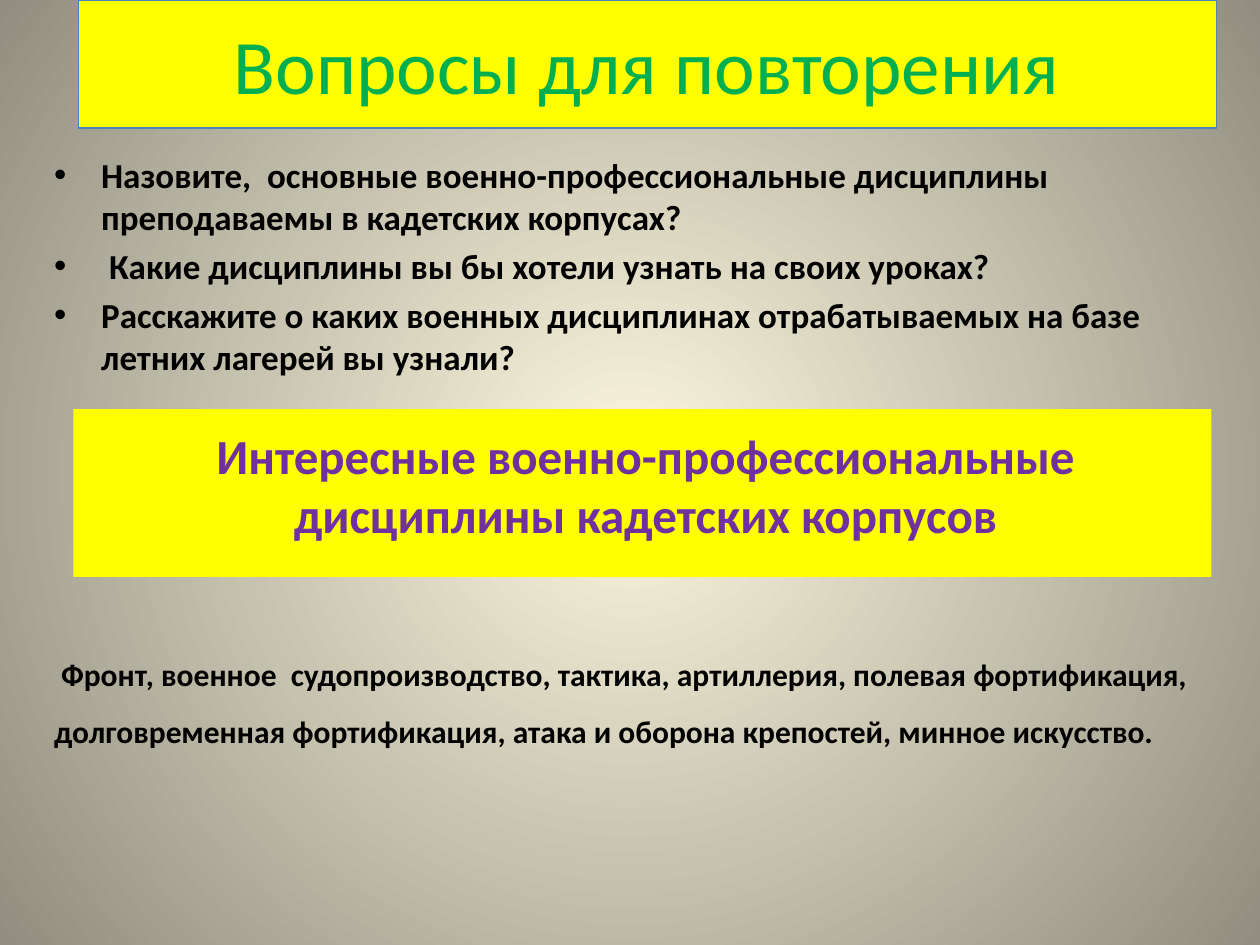
"""Build the review-questions slide."""
from dataclasses import dataclass

from lxml.etree import SubElement
from pptx import Presentation
from pptx.dml.color import RGBColor
from pptx.enum.shapes import MSO_SHAPE
from pptx.enum.text import MSO_ANCHOR, MSO_AUTO_SIZE, PP_ALIGN
from pptx.oxml.ns import qn
from pptx.util import Cm, Pt


@dataclass(frozen=True)
class Theme:
    font: str = "Calibri"
    glow: str = "FCF7DD"
    edge: str = "918E81"
    panel: str = "FFFF00"
    border: str = "4F81BD"
    title: str = "00B050"
    heading: str = "7030A0"
    body: str = "000000"
    title_size: int = 44
    heading_size: int = 28
    question_size: int = 20
    answer_size: int = 18


class Deck:
    def __init__(self, prs, theme):
        self.theme = theme
        self.s = prs.slides.add_slide(prs.slide_layouts[6])

    def background(self):
        fill = self.s.background.fill
        fill.gradient()
        for stop, color in zip(fill.gradient_stops, (self.theme.glow, self.theme.edge)):
            stop.color.rgb = RGBColor.from_string(color)
        grad = self.s.element.find(".//" + qn("a:gradFill"))
        grad.remove(grad.find(qn("a:lin")))
        circle = SubElement(grad, qn("a:path"), path="circle")
        SubElement(circle, qn("a:fillToRect"), dict.fromkeys("ltrb", "100000"))

    def panel(self, box, border=None):
        sp = self.s.shapes.add_shape(MSO_SHAPE.RECTANGLE, *map(Cm, box))
        sp.shadow.inherit = False
        sp.fill.solid()
        sp.fill.fore_color.rgb = RGBColor.from_string(self.theme.panel)
        if border:
            sp.line.color.rgb = RGBColor.from_string(border)
            sp.line.width = Pt(0.75)
        else:
            sp.line.fill.background()
        return sp

    def textbox(self, box):
        return self.s.shapes.add_textbox(*map(Cm, box))

    def add_text(self, sp, lines, size, color, bold=True, bullet=False, frame=None, para=None):
        tf = sp.text_frame
        for name, value in {"word_wrap": True, **(frame or {})}.items():
            setattr(tf, name, value)
        font = {"name": self.theme.font, "size": Pt(size), "bold": bold}
        for i, line in enumerate(lines):
            p = tf.add_paragraph() if i else tf.paragraphs[0]
            for name, value in (para or {}).items():
                setattr(p, name, value)
            if bullet:
                self.bullet(p)
            r = p.add_run()
            r.text = line
            for name, value in font.items():
                setattr(r.font, name, value)
            r.font.color.rgb = RGBColor.from_string(color)

    def bullet(self, p):
        props = p._p.get_or_add_pPr()
        indent = Cm(0.95)
        props.set("marL", str(indent))
        props.set("indent", str(-indent))
        SubElement(props, qn("a:buFont"), typeface="Arial")
        SubElement(props, qn("a:buChar"), char="•")


def main():
    prs = Presentation()
    prs.slide_width, prs.slide_height = Cm(25.4), Cm(19.05)
    theme = Theme()
    deck = Deck(prs, theme)
    centred = {"alignment": PP_ALIGN.CENTER}
    grow = {"auto_size": MSO_AUTO_SIZE.SHAPE_TO_FIT_TEXT}

    deck.background()
    deck.add_text(deck.panel((1.58, 0, 22.94, 2.58), theme.border),
                  ["Вопросы для повторения"], theme.title_size, theme.title, bold=False,
                  frame={"vertical_anchor": MSO_ANCHOR.MIDDLE}, para=centred)
    deck.add_text(deck.textbox((0.84, 2.97, 23.77, 5.72)), [
        "Назовите,  основные военно-профессиональные дисциплины преподаваемы в кадетских корпусах?",
        " Какие дисциплины вы бы хотели узнать на своих уроках?",
        "Расскажите о каких военных дисциплинах отрабатываемых на базе летних лагерей вы узнали?",
    ], theme.question_size, theme.body, bullet=True, para={"space_before": Pt(4)})
    deck.panel((1.48, 8.25, 22.94, 3.38))
    deck.add_text(deck.textbox((2.11, 8.46, 21.8, 2.64)),
                  ["Интересные военно-профессиональные дисциплины кадетских корпусов"],
                  theme.heading_size, theme.heading, frame=grow, para=centred)
    deck.add_text(deck.textbox((0.84, 12.7, 24.13, 2.57)), [
        " Фронт, военное  судопроизводство, тактика, артиллерия, полевая фортификация, "
        "долговременная фортификация, атака и оборона крепостей, минное искусство.",
    ], theme.answer_size, theme.body, frame=grow, para={"line_spacing": 1.5})
    prs.save("out.pptx")


if __name__ == "__main__":
    main()
